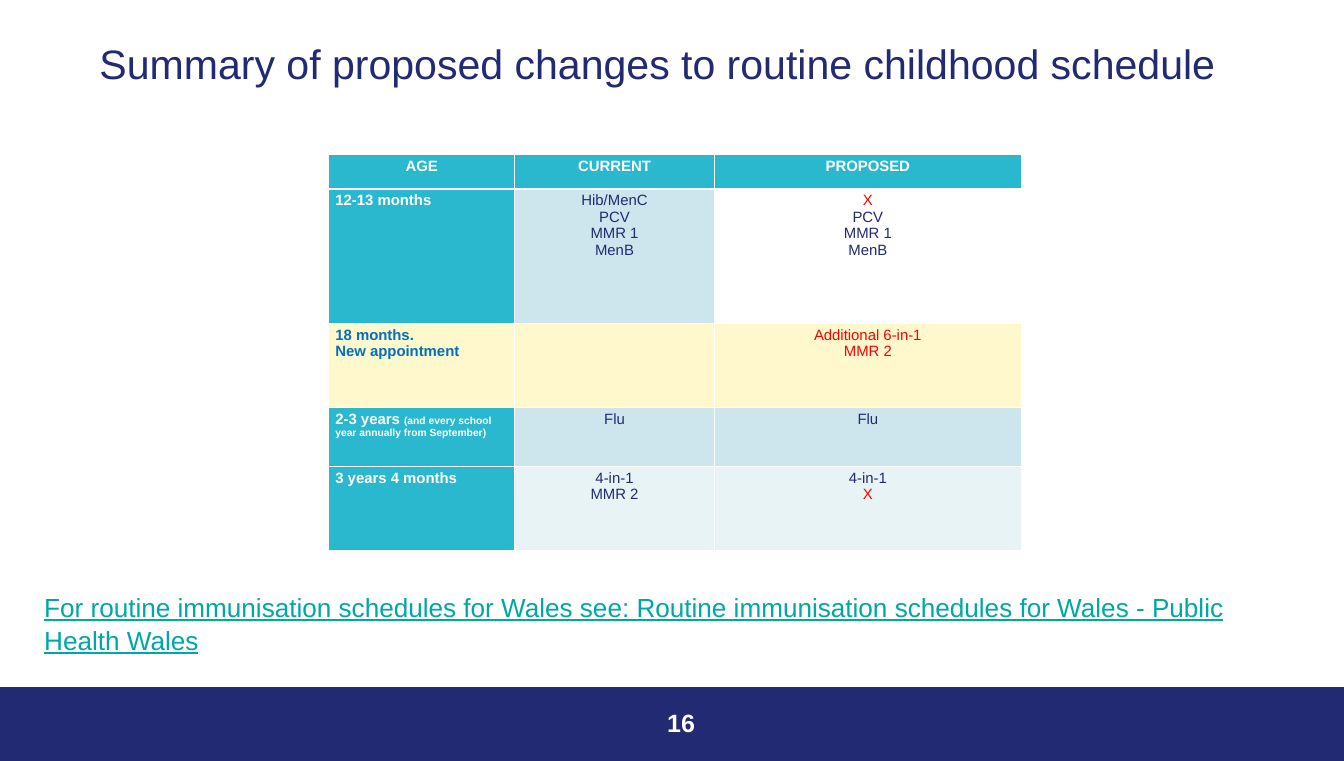
from lxml.etree import SubElement
from pptx import Presentation
from pptx.dml.color import RGBColor
from pptx.enum.shapes import MSO_SHAPE as Shape
from pptx.enum.text import MSO_ANCHOR as Anchor, MSO_AUTO_SIZE as AutoSize, PP_ALIGN as Align
from pptx.oxml.ns import qn
from pptx.util import Inches, Pt

NAVY = RGBColor(0x21, 0x2A, 0x73)
TEAL = RGBColor(0x29, 0xB8, 0xCE)
LINK = RGBColor(0x00, 0xA7, 0xA7)
PALE = RGBColor(0xCD, 0xE6, 0xED)
PALER = RGBColor(0xE8, 0xF3, 0xF6)
CREAM = RGBColor(0xFF, 0xF8, 0xCC)
BLUE = RGBColor(0x00, 0x70, 0xC0)
RED = RGBColor(0xFF, 0x00, 0x00)
WHITE = RGBColor(0xFF, 0xFF, 0xFF)
FONT = "Arial"

TITLE = "Summary of proposed changes to routine childhood schedule"
FOOTNOTE = ("For routine immunisation schedules for Wales see: "
            "Routine immunisation schedules for Wales - Public Health Wales")
PAGE_NUMBER = "16"

HEADINGS = ["AGE", "CURRENT", "PROPOSED"]
COLUMN_WIDTHS = [2.77, 2.97, 4.57]
HEADER_HEIGHT = 0.51
CHANGES = {"X", "Additional 6-in-1"}  # vaccines always shown in red
SCHEDULE = [
    {"age": "12-13 months", "height": 2,
     "current": ["Hib/MenC", "PCV", "MMR 1", "MenB"],
     "proposed": ["X", "PCV", "MMR 1", "MenB"],
     "fills": [TEAL, PALE, None]},
    {"age": "18 months. New\u00a0appointment", "height": 1.25, "new": True,
     "current": [], "proposed": ["Additional 6-in-1", "MMR 2"],
     "fills": [CREAM, CREAM, CREAM]},
    {"age": "2-3 years ", "height": 0.88,
     "note": "(and every school year annually from September)",
     "current": ["Flu"], "proposed": ["Flu"],
     "fills": [TEAL, PALE, PALE]},
    {"age": "3 years 4 months", "height": 1.25,
     "current": ["4-in-1", "MMR 2"], "proposed": ["4-in-1", "X"],
     "fills": [TEAL, PALER, PALER]},
]


def add_span(para, text, size, color, bold=False, underline=False):
    span = para.add_run()
    span.text = text
    font = span.font
    font.name, font.size, font.bold = FONT, Pt(size), bold
    font.underline = underline
    font.color.rgb = color


def add_text_box(slide, left, top, width, height):
    box = slide.shapes.add_textbox(Inches(left), Inches(top), Inches(width), Inches(height))
    box.text_frame.word_wrap = True
    return box.text_frame.paragraphs[0]


def style_cell(cell, fill, top=0.73, bottom=0.73):
    """Give the cell white borders, widths in points, and then its fill."""
    properties = cell._tc.get_or_add_tcPr()
    for side, width in (("L", 0.73), ("R", 0.73), ("T", top), ("B", bottom)):
        line = SubElement(properties, qn(f"a:ln{side}"), w=str(Pt(width)))
        solid = SubElement(line, qn("a:solidFill"))
        SubElement(solid, qn("a:srgbClr"), val=str(WHITE))
    if fill is None:
        cell.fill.background()
    else:
        cell.fill.solid()
        cell.fill.fore_color.rgb = fill


def fill_cell(cell, lines, align):
    """Write one paragraph for each line; a line is a list of (text, size, color, bold)."""
    frame = cell.text_frame
    for index, line in enumerate(lines):
        para = frame.add_paragraph() if index else frame.paragraphs[0]
        para.alignment = align
        for span in line:
            add_span(para, *span)


def add_schedule(slide):
    table = slide.shapes.add_table(
        len(SCHEDULE) + 1, len(HEADINGS), Inches(4.89), Inches(2.3),
        Inches(sum(COLUMN_WIDTHS)), Inches(5.9)).table
    heights = [HEADER_HEIGHT] + [row["height"] for row in SCHEDULE]
    for column, width in zip(table.columns, COLUMN_WIDTHS):
        column.width = Inches(width)
    for row, height in zip(table.rows, heights):
        row.height = Inches(height)

    for column, heading in enumerate(HEADINGS):
        cell = table.cell(0, column)
        style_cell(cell, TEAL, bottom=2.19)
        fill_cell(cell, [[(heading, 16, WHITE, True)]], Align.CENTER)

    for number, row in enumerate(SCHEDULE, start=1):
        is_new = row.get("new", False)
        cells = [table.cell(number, column) for column in range(len(HEADINGS))]
        for cell, fill in zip(cells, row["fills"]):
            style_cell(cell, fill, top=2.19 if number == 1 else 0.73)
        age = [(row["age"], 16, BLUE if is_new else WHITE, True)]
        if "note" in row:
            age.append((row["note"], 11, WHITE, True))
        fill_cell(cells[0], [age], Align.LEFT)
        for cell, vaccines in zip(cells[1:], (row["current"], row["proposed"])):
            lines = [[(name, 16, RED if is_new or name in CHANGES else NAVY, False)]
                     for name in vaccines]
            fill_cell(cell, lines, Align.CENTER)


def main():
    deck = Presentation()
    deck.slide_width, deck.slide_height = Inches(20), Inches(11.32)
    slide = deck.slides.add_slide(deck.slide_layouts[5])

    footer = slide.shapes.add_shape(
        Shape.RECTANGLE, 0, Inches(10.22), deck.slide_width, Inches(1.1))
    footer.shadow.inherit = False
    footer.fill.solid()
    footer.fill.fore_color.rgb = NAVY
    footer.line.color.rgb = NAVY
    footer.line.width = Pt(1)

    title = slide.shapes.title
    title.left, title.top = Inches(1.38), Inches(0.6)
    title.width, title.height = Inches(17.25), Inches(2.19)
    frame = title.text_frame
    frame.auto_size = AutoSize.NONE
    frame.vertical_anchor = Anchor.TOP
    para = frame.paragraphs[0]
    para.alignment = Align.LEFT
    para.line_spacing = 0.9
    add_span(para, TITLE, 44, NAVY)

    page_number = add_text_box(slide, 9.59, 10.48, 0.85, 0.6)
    page_number.alignment = Align.RIGHT
    add_span(page_number, PAGE_NUMBER, 26.8, WHITE, bold=True)

    add_schedule(slide)

    footnote = add_text_box(slide, 0.56, 8.72, 18.57, 1.04)
    footnote.line_spacing = 1.05
    add_span(footnote, FOOTNOTE, 28, LINK, underline=True)

    deck.save("out.pptx")


if __name__ == "__main__":
    main()
